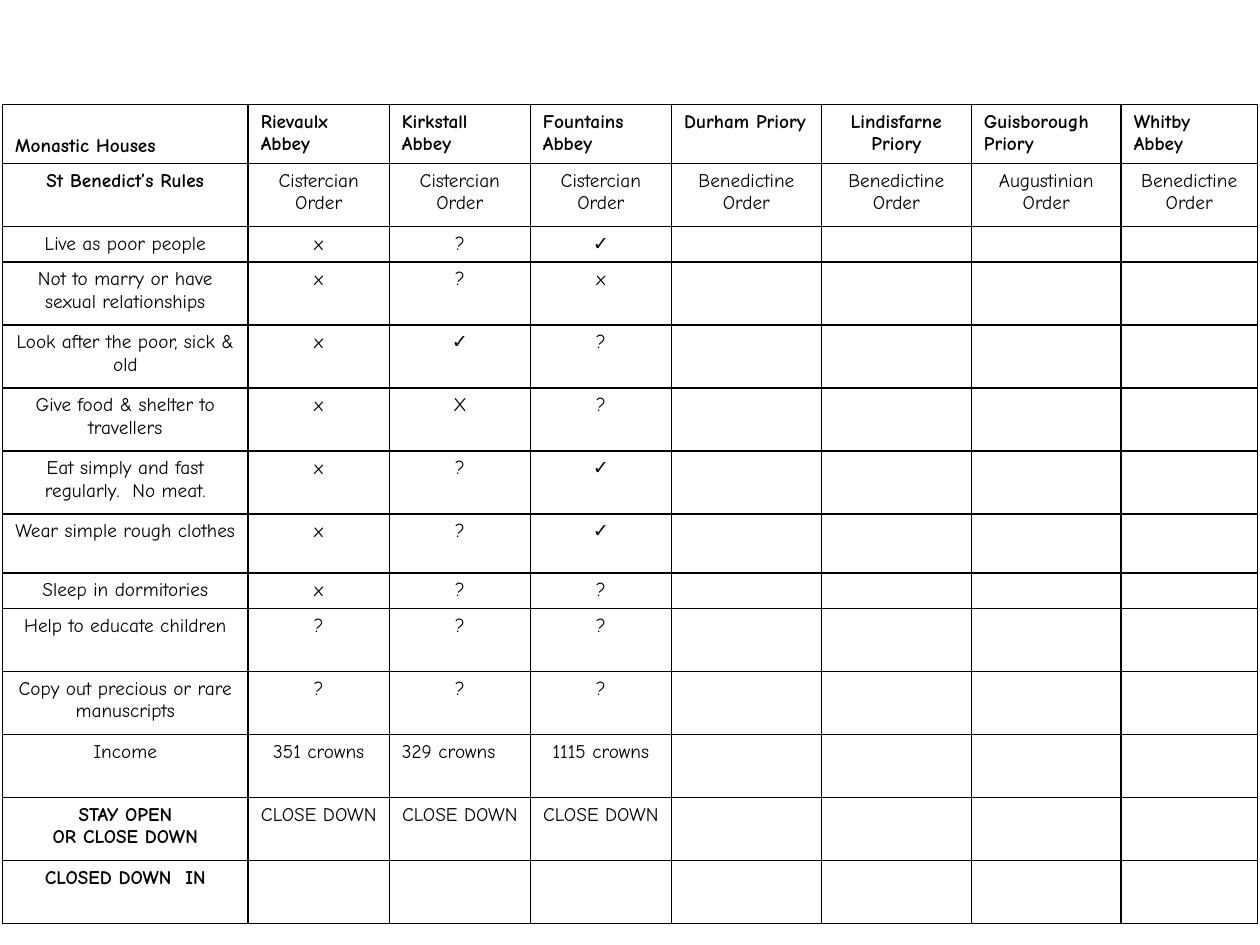
from dataclasses import dataclass
from lxml import etree
from pptx import Presentation
from pptx.dml.color import RGBColor
from pptx.enum.text import MSO_ANCHOR, PP_ALIGN
from pptx.oxml.ns import qn
from pptx.table import _Cell
from pptx.util import Inches, Pt

LEFT, MID = PP_ALIGN.LEFT, PP_ALIGN.CENTER
BASE = MSO_ANCHOR.BOTTOM


@dataclass(frozen=True)
class Theme:
    font: str = "Comic Neue"
    size: int = 11
    ink: str = "000000"
    rule: int = 1


@dataclass(frozen=True)
class Row:
    high: float
    texts: tuple[str, ...]


THEME = Theme()
WIDTHS = (1.95, 1.12, 1.12, 1.12, 1.19, 1.19, 1.19, 1.08)
ROWS = (
    Row(0.47, ("Monastic Houses", "Rievaulx Abbey", "Kirkstall Abbey",
               "Fountains Abbey", "Durham Priory", "Lindisfarne Priory",
               "Guisborough Priory", "Whitby Abbey")),
    Row(0.5, ("St Benedict’s Rules", "Cistercian Order", "Cistercian Order",
              "Cistercian Order", "Benedictine Order", "Benedictine Order",
              "Augustinian Order", "Benedictine Order")),
    Row(0.28, ("Live as poor people", "x", "?", "✓")),
    Row(0.5, ("Not to marry or have sexual relationships", "x", "?", "x")),
    Row(0.5, ("Look after the poor, sick & old", "x", "✓", "?")),
    Row(0.5, ("Give food & shelter to travellers", "x", "X", "?")),
    Row(0.5, ("Eat simply and fast regularly.  No meat.", "x", "?", "✓")),
    Row(0.47, ("Wear simple rough clothes", "x", "?", "✓")),
    Row(0.28, ("Sleep in dormitories", "x", "?", "?")),
    Row(0.5, ("Help to educate children", "?", "?", "?")),
    Row(0.5, ("Copy out precious or rare manuscripts", "?", "?", "?")),
    Row(0.5, ("Income", "351 crowns", "329 crowns", "1115 crowns")),
    Row(0.5, ("STAY OPEN\nOR CLOSE DOWN",) + ("CLOSE DOWN",) * 3),
    Row(0.5, ("CLOSED DOWN  IN",)),
)
BOLD = {"St Benedict’s Rules", "STAY OPEN\nOR CLOSE DOWN", "CLOSED DOWN  IN"}


def frame(cell: _Cell) -> None:
    props = cell._tc.get_or_add_tcPr()
    for side in ("a:lnL", "a:lnR", "a:lnT", "a:lnB"):
        line = etree.SubElement(props, qn(side), w=str(Pt(THEME.rule)))
        fill = etree.SubElement(line, qn("a:solidFill"))
        etree.SubElement(fill, qn("a:srgbClr"), val=THEME.ink)
    cell.fill.background()


def write(cell: _Cell, text: str, bold: bool, align: PP_ALIGN) -> None:
    cell.text = text
    for para in cell.text_frame.paragraphs:
        para.alignment = align
        font = para.font
        font.name, font.size, font.bold = THEME.font, Pt(THEME.size), bold
        font.color.rgb = RGBColor.from_string(THEME.ink)
        if not text:
            para._p.get_or_add_endParaRPr().set("sz", str(THEME.size * 100))


def main() -> None:
    deck = Presentation()
    deck.slide_width, deck.slide_height = Inches(10), Inches(7.5)
    slide = deck.slides.add_slide(deck.slide_layouts[6])
    high = sum(row.high for row in ROWS)
    grid = slide.shapes.add_table(
        len(ROWS), len(WIDTHS), Inches(0.02), Inches(0.83),
        Inches(sum(WIDTHS)), Inches(high)).table
    grid.first_row = grid.horz_banding = False
    for col, width in zip(grid.columns, WIDTHS):
        col.width = Inches(width)
    for r, row in enumerate(ROWS):
        grid.rows[r].height = Inches(row.high)
        for c in range(len(WIDTHS)):
            text = row.texts[c] if c < len(row.texts) else ""
            head = r == 0
            left = (head and text != "Lindisfarne Priory") or text == "329 crowns"
            cell = grid.cell(r, c)
            write(cell, text, head or text in BOLD, LEFT if left else MID)
            frame(cell)
    grid.cell(0, 0).vertical_anchor = BASE
    deck.save("out.pptx")


if __name__ == "__main__":
    main()
